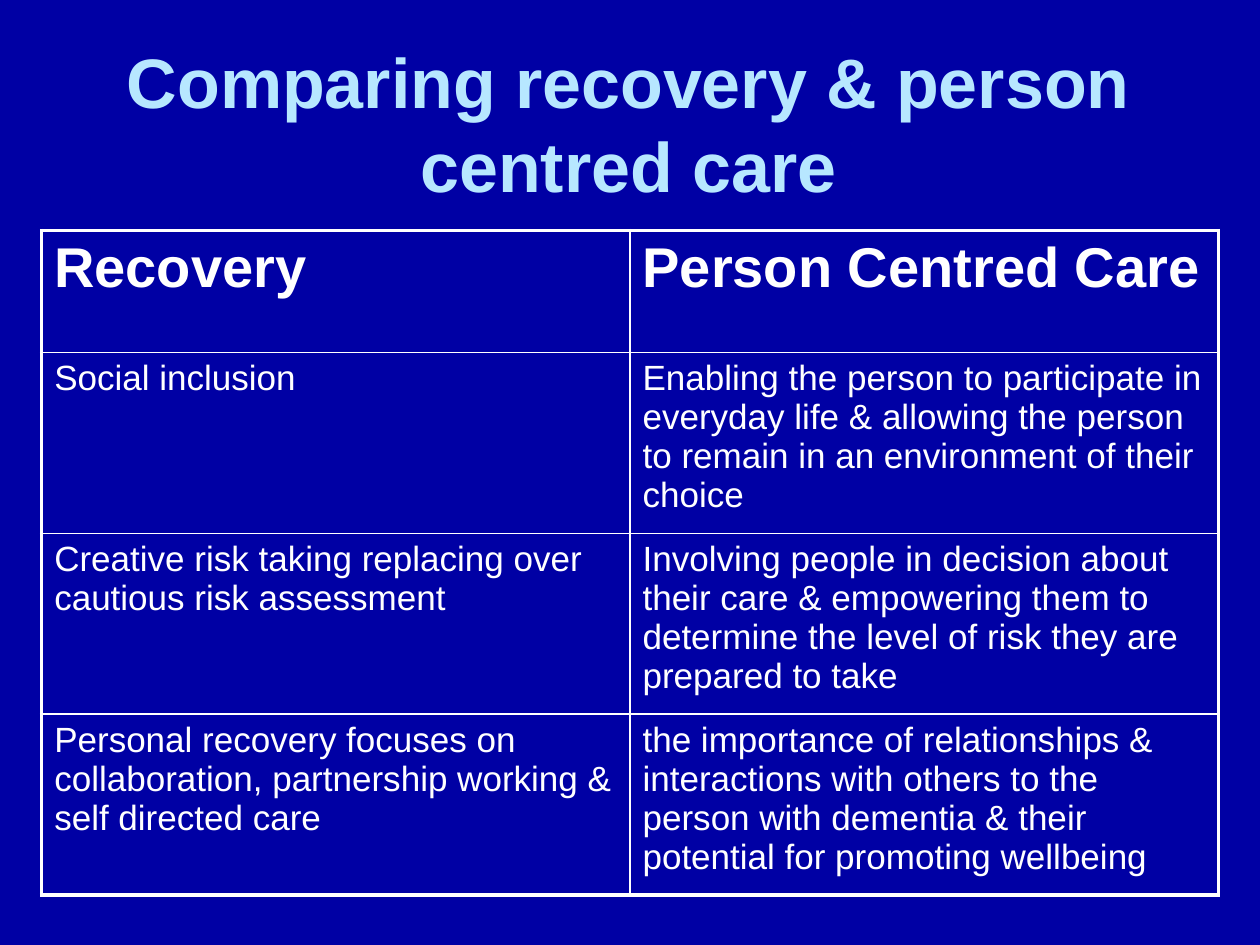
import pptx
import pptx.dml.color
import pptx.enum.text
import pptx.oxml
import pptx.oxml.ns
import pptx.util
from dataclasses import dataclass
from pptx.util import Cm


@dataclass(frozen=True)
class Theme:
    background: str = "0000A4"
    title: str = "B7E7FF"
    text: str = "FFFFFF"
    font: str = "Arial"
    title_size: int = 40
    header_size: int = 32
    body_size: int = 20
    outer_line: float = 2.25
    inner_line: float = 1


THEME = Theme()
TITLE = "Comparing recovery & person centred care"
ROWS = [
    ("Recovery", "Person Centred Care"),
    (
        "Social inclusion",
        "Enabling the person to participate in everyday life & allowing the person "
        "to remain in an environment of their choice",
    ),
    (
        "Creative risk taking replacing over cautious risk assessment",
        "Involving people in decision about their care & empowering them to "
        "determine the level of risk they are prepared to take",
    ),
    (
        "Personal recovery focuses on collaboration, partnership working & self directed care",
        "the importance of relationships & interactions with others to the person "
        "with dementia & their potential for promoting wellbeing",
    ),
]


def rgb(color):
    return pptx.dml.color.RGBColor.from_string(color)


def write_text(tf, text, size, color=THEME.text, bold=False, align=None):
    tf.word_wrap = True
    p = tf.paragraphs[0]
    p.alignment = align
    r = p.add_run()
    r.text = text
    r.font.name = THEME.font
    r.font.size = pptx.util.Pt(size)
    r.font.bold = bold
    r.font.color.rgb = rgb(color)


def set_borders(cell, widths):
    tcPr = cell._tc.get_or_add_tcPr()
    for i, (side, width) in enumerate(widths.items()):
        ln = pptx.oxml.parse_xml(
            f'<a:ln{side} {pptx.oxml.ns.nsdecls("a")} w="{pptx.util.Pt(width)}">'
            f'<a:solidFill><a:srgbClr val="{THEME.text}"/></a:solidFill></a:ln{side}>'
        )
        tcPr.insert(i, ln)


def add_title(s, left, top, width, height):
    sp = s.shapes.add_textbox(left, top, width, height)
    tf = sp.text_frame
    tf.vertical_anchor = pptx.enum.text.MSO_ANCHOR.MIDDLE
    write_text(tf, TITLE, THEME.title_size, THEME.title, bold=True,
               align=pptx.enum.text.PP_ALIGN.CENTER)


def add_comparison(s, left, top, width, height):
    n_rows, n_cols = len(ROWS), len(ROWS[0])
    table = s.shapes.add_table(n_rows, n_cols, left, top, width, height).table
    table.horz_banding = False
    outer, inner = THEME.outer_line, THEME.inner_line
    for i, row in enumerate(ROWS):
        header = i == 0
        for j, text in enumerate(row):
            cell = table.cell(i, j)
            cell.fill.background()
            write_text(cell.text_frame, text, bold=header,
                       size=THEME.header_size if header else THEME.body_size)
            set_borders(cell, {
                "L": outer if j == 0 else inner,
                "R": outer if j == n_cols - 1 else inner,
                "T": outer if header else inner,
                "B": outer if i == n_rows - 1 else inner,
            })


def main():
    prs = pptx.Presentation()
    prs.slide_width, prs.slide_height = Cm(25.4), Cm(19.05)
    s = prs.slides.add_slide(prs.slide_layouts[6])
    s.background.fill.solid()
    s.background.fill.fore_color.rgb = rgb(THEME.background)
    add_title(s, Cm(0.84), Cm(0.64), Cm(23.65), Cm(3.68))
    add_comparison(s, Cm(0.84), Cm(4.65), Cm(23.72), Cm(9.84))
    prs.save("out.pptx")


if __name__ == "__main__":
    main()
